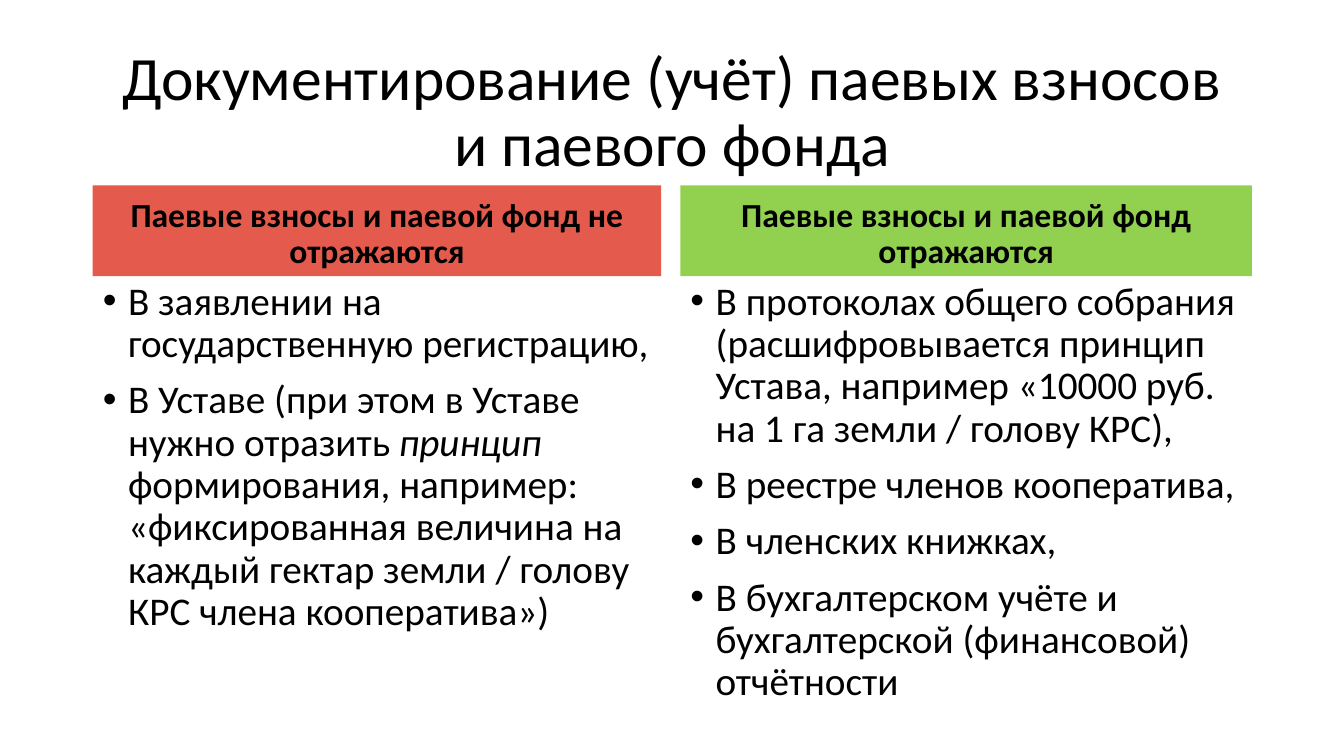
from lxml import etree
from pptx import Presentation
from pptx.dml.color import RGBColor
from pptx.enum.text import MSO_ANCHOR, MSO_AUTO_SIZE, PP_ALIGN
from pptx.oxml.ns import qn
from pptx.util import Pt

BLACK = RGBColor(0x00, 0x00, 0x00)
RED = RGBColor(0xE4, 0x5A, 0x4C)
GREEN = RGBColor(0x92, 0xD0, 0x50)
CENTER, LEFT = PP_ALIGN.CENTER, PP_ALIGN.LEFT
TOP, MIDDLE, BOTTOM = MSO_ANCHOR.TOP, MSO_ANCHOR.MIDDLE, MSO_ANCHOR.BOTTOM
NO_AUTOFIT = MSO_AUTO_SIZE.NONE
COMPARISON_LAYOUT = 4
TITLE_BOX = (66.24, 28.8, 828, 104.4)
HEADING_TOP, HEADING_HEIGHT = 132.5, 64.8
LIST_TOP, LIST_HEIGHT = 197.3, 290.2

COLUMNS = [
    (66.24, 406, RED, "Паевые взносы и паевой фонд не отражаются", [
        [("В заявлении на государственную регистрацию,", False)],
        [("В Уставе (при этом в Уставе нужно отразить ", False),
         ("принцип", True),
         (" формирования, например: «фиксированная величина на каждый гектар "
          "земли / голову КРС члена кооператива»)", False)],
    ]),
    (486, 408.24, GREEN, "Паевые взносы и паевой фонд отражаются", [
        [("В протоколах общего собрания (расшифровывается принцип Устава, "
          "например «10000 руб. на 1 га земли / голову КРС),", False)],
        [("В реестре членов кооператива,", False)],
        [("В членских книжках,", False)],
        [("В бухгалтерском учёте и бухгалтерской (финансовой) отчётности", False)],
    ]),
]


class ComparisonSlide:
    """Holds the text style and the slide, and fills its placeholders."""

    font_name = "Calibri"
    line_spacing = 0.9
    paragraph_gap = 10
    indent = 18

    def __init__(self, slide):
        self.slide = slide

    def place(self, idx, box, anchor):
        holder = self.slide.placeholders[idx]
        holder.left, holder.top, holder.width, holder.height = map(Pt, box)
        frame = holder.text_frame
        frame.word_wrap = True
        frame.auto_size = NO_AUTOFIT
        frame.vertical_anchor = anchor
        return holder

    def add_text(self, frame, paragraphs, size, align, bold=False, bulleted=False):
        for number, runs in enumerate(paragraphs):
            paragraph = frame.add_paragraph() if number else frame.paragraphs[0]
            paragraph.alignment = align
            paragraph.line_spacing = self.line_spacing
            paragraph.space_before = Pt(self.paragraph_gap if number else 0)
            if bulleted:
                self.add_bullet(paragraph)
            for text, italic in runs:
                run = paragraph.add_run()
                run.text = text
                run.font.name = self.font_name
                run.font.size = Pt(size)
                run.font.bold = bold
                run.font.italic = italic
                run.font.color.rgb = BLACK

    def add_bullet(self, paragraph):
        properties = paragraph._p.get_or_add_pPr()
        properties.set("marL", str(Pt(self.indent)))
        properties.set("indent", str(-Pt(self.indent)))
        etree.SubElement(properties, qn("a:buFont"), typeface="Arial")
        etree.SubElement(properties, qn("a:buChar"), char="•")

    def title(self, text):
        holder = self.place(0, TITLE_BOX, MIDDLE)
        self.add_text(holder.text_frame, [[(text, False)]], 44, CENTER)

    def heading(self, idx, left, width, fill, text):
        holder = self.place(idx, (left, HEADING_TOP, width, HEADING_HEIGHT), BOTTOM)
        holder.fill.solid()
        holder.fill.fore_color.rgb = fill
        self.add_text(holder.text_frame, [[(text, False)]], 24, CENTER, bold=True)

    def bullet_list(self, idx, left, width, items):
        holder = self.place(idx, (left, LIST_TOP, width, LIST_HEIGHT), TOP)
        self.add_text(holder.text_frame, items, 28, LEFT, bulleted=True)


def main():
    deck = Presentation()
    deck.slide_width, deck.slide_height = Pt(960), Pt(540)
    layout = deck.slide_layouts[COMPARISON_LAYOUT]
    comparison = ComparisonSlide(deck.slides.add_slide(layout))
    comparison.title("Документирование (учёт) паевых взносов и паевого фонда")
    for number, (left, width, fill, heading, items) in enumerate(COLUMNS):
        heading_idx = 2 * number + 1
        comparison.heading(heading_idx, left, width, fill, heading)
        comparison.bullet_list(heading_idx + 1, left, width, items)
    deck.save("out.pptx")


if __name__ == "__main__":
    main()
